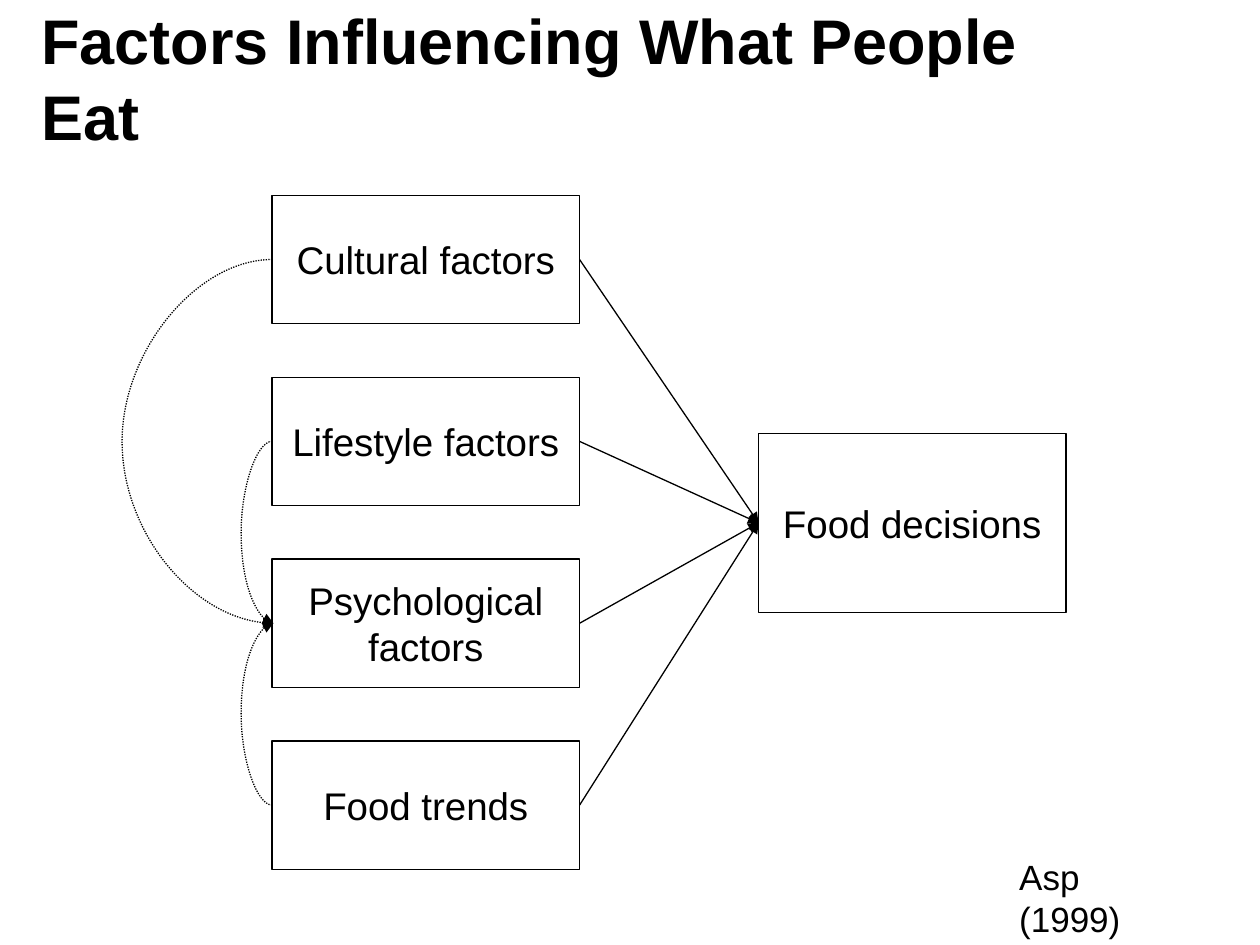
from lxml.etree import SubElement
from pptx import Presentation
from pptx.dml.color import RGBColor
from pptx.enum.dml import MSO_LINE
from pptx.enum.shapes import MSO_CONNECTOR as CONNECTOR, MSO_SHAPE as SHAPE
from pptx.enum.text import MSO_ANCHOR as ANCHOR, PP_ALIGN as ALIGN
from pptx.oxml.ns import qn
from pptx.util import Inches, Pt

COLORS = {"ink": "000000", "background": "FFFFFF"}
FONT = "Arial"
LINE_WIDTH = Pt(0.75)
LEFT_SIDE, RIGHT_SIDE = 1, 3

FACTORS = ["Cultural factors", "Lifestyle factors", "Psychological factors", "Food trends"]
PSYCHOLOGICAL = 2
# Index of the influencing factor and how far its curve bulges to the left
INFLUENCES = [(0, Inches(1.21)), (1, Inches(0.25)), (3, Inches(0.25))]
CURVE_WIDTH = Inches(0.01)


def color(name):
    return RGBColor.from_string(COLORS[name])


def write(shape, text, size, align=ALIGN.LEFT, anchor=ANCHOR.TOP, bold=False):
    frame = shape.text_frame
    frame.word_wrap = True
    frame.vertical_anchor = anchor
    paragraph = frame.paragraphs[0]
    paragraph.alignment = align
    run = paragraph.add_run()
    run.text = text
    run.font.name = FONT
    run.font.size = Pt(size)
    run.font.bold = bold
    run.font.color.rgb = color("ink")


def add_text(slide, box, text, size, **style):
    write(slide.shapes.add_textbox(*box), text, size, **style)


def add_box(slide, box, text):
    shape = slide.shapes.add_shape(SHAPE.RECTANGLE, *box)
    shape.shadow.inherit = False
    shape.fill.background()
    shape.line.color.rgb = color("ink")
    shape.line.width = LINE_WIDTH
    write(shape, text, 22, align=ALIGN.CENTER, anchor=ANCHOR.MIDDLE)
    return shape


def add_arrow(slide, kind, source, source_side, target):
    """Join a side of source to the left side of target."""
    arrow = slide.shapes.add_connector(kind, 0, 0, 0, 0)
    arrow.begin_connect(source, source_side)
    arrow.end_connect(target, LEFT_SIDE)
    arrow.line.color.rgb = color("ink")
    arrow.line.width = LINE_WIDTH
    return arrow


def finish_arrow(arrow):
    """Add the arrowhead and remove the theme shadow."""
    SubElement(arrow.line._get_or_add_ln(), qn("a:tailEnd"), type="triangle")
    SubElement(arrow._element.spPr, qn("a:effectLst"))


def add_influence(slide, source, target, bulge):
    arrow = add_arrow(slide, CONNECTOR.CURVE, source, LEFT_SIDE, target)
    arrow.end_x = arrow.begin_x + CURVE_WIDTH
    arrow.line.dash_style = MSO_LINE.ROUND_DOT
    geometry = arrow._element.spPr.find(qn("a:prstGeom"))
    adjustment = round(-100000 * bulge / CURVE_WIDTH)
    SubElement(geometry.get_or_add_avLst(), qn("a:gd"), name="adj1", fmla=f"val {adjustment}")
    finish_arrow(arrow)


def add_factors(slide, box):
    """Stack the factor boxes evenly over the height of the box."""
    left, top, width, height = box
    box_height = Inches(1.02)
    pitch = (height - box_height) // (len(FACTORS) - 1)
    return [
        add_box(slide, (left, top + index * pitch, width, box_height), text)
        for index, text in enumerate(FACTORS)
    ]


def add_diagram(slide, box):
    left, top, width, height = box
    box_width = Inches(2.44)
    decision_box = (left + width - box_width, top + Inches(1.89), box_width, Inches(1.42))
    decision = add_box(slide, decision_box, "Food decisions")
    factors = add_factors(slide, (left, top, box_width, height))
    for factor in factors:
        finish_arrow(add_arrow(slide, CONNECTOR.STRAIGHT, factor, RIGHT_SIDE, decision))
    for index, bulge in INFLUENCES:
        add_influence(slide, factors[index], factors[PSYCHOLOGICAL], bulge)


def main():
    presentation = Presentation()
    presentation.slide_width, presentation.slide_height = Inches(10), Inches(7.5)
    slide = presentation.slides.add_slide(presentation.slide_layouts[6])
    slide.background.fill.solid()
    slide.background.fill.fore_color.rgb = color("background")

    title_box = (Inches(0.23), Inches(0.15), Inches(8.03), Inches(0.93))
    add_text(slide, title_box, "Factors Influencing What People Eat", 36,
             anchor=ANCHOR.MIDDLE, bold=True)
    add_diagram(slide, (Inches(2.16), Inches(1.55), Inches(6.3), Inches(5.35)))
    source_box = (Inches(7.99), Inches(6.74), Inches(1.55), Inches(0.43))
    add_text(slide, source_box, "Asp (1999)", 20)
    presentation.save("out.pptx")


if __name__ == "__main__":
    main()
